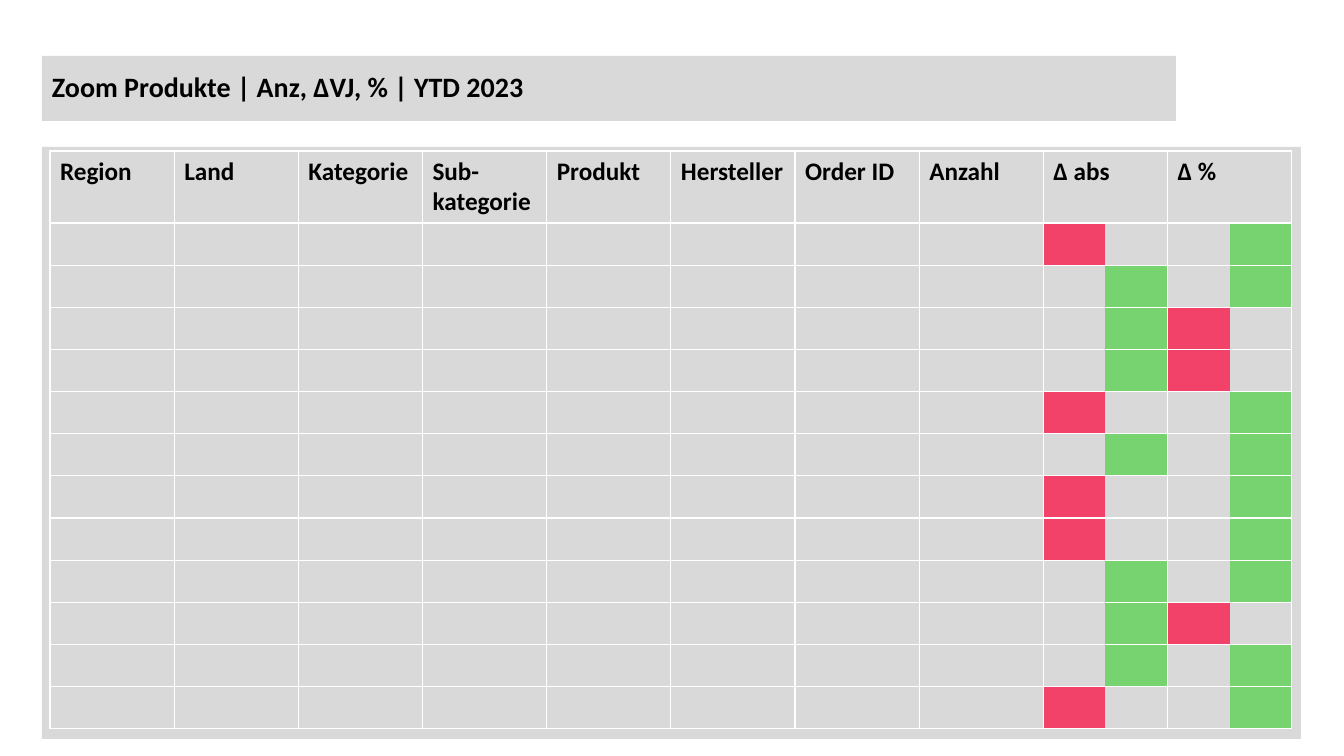
from lxml import etree
from pptx import Presentation
from pptx import util as u
from pptx.dml.color import RGBColor
from pptx.enum import shapes, text
from pptx.oxml.ns import qn

EMU_PER_PX = 914400 / 100.8
GREY, WHITE, BLACK = "D9D9D9", "FFFFFF", "000000"
RED, GREEN = "F24269", "77D36F"
HEADERS = ["Region", "Land", "Kategorie", "Sub-kategorie", "Produkt",
           "Hersteller", "Order ID", "Anzahl", "Δ abs", "Δ %"]
DELTA_SIGNS = ["-+", "++", "+-", "+-", "-+", "++",
               "-+", "-+", "++", "+-", "++", "-+"]
DELTA_STOPS = {"-": (RED, GREY), "+": (GREY, GREEN)}


def px(value):
    return u.Emu(round(value * EMU_PER_PX))


def color(value):
    return RGBColor.from_string(value)


def write(frame, words, size):
    paragraph = frame.paragraphs[0]
    paragraph.text = words
    font = paragraph.runs[0].font
    for name, value in {"name": "Calibri", "size": u.Pt(size), "bold": True}.items():
        setattr(font, name, value)
    font.color.rgb = color(BLACK)
    return paragraph


def add_panel(slide, left, top, width, height):
    panel = slide.shapes.add_shape(shapes.MSO_SHAPE.RECTANGLE,
                                   px(left), px(top), px(width), px(height))
    panel.shadow.inherit = False
    panel.fill.solid()
    panel.fill.fore_color.rgb = color(GREY)
    panel.line.fill.background()
    return panel


def add_title(slide, words):
    frame = add_panel(slide, 42, 56, 1134, 65).text_frame
    frame.word_wrap = True
    frame.vertical_anchor = text.MSO_ANCHOR.MIDDLE
    paragraph = write(frame, words, 20)
    paragraph.alignment = text.PP_ALIGN.LEFT
    paragraph.line_spacing = 0.9


def set_borders(cell):
    properties = cell._tc.get_or_add_tcPr()
    for side in ("a:lnL", "a:lnR", "a:lnT", "a:lnB"):
        line = etree.SubElement(properties, qn(side), w=str(u.Pt(1)))
        fill = etree.SubElement(line, qn("a:solidFill"))
        etree.SubElement(fill, qn("a:srgbClr"), val=WHITE)


def fill_halves(cell, colors):
    cell.fill.gradient()
    cell.fill.gradient_angle = 0
    for stop, value in zip(cell.fill.gradient_stops, colors):
        stop.position = 0.5
        stop.color.rgb = color(value)


def add_product_table(slide, left, top, width, header_height, body_height):
    row_count, column_count = len(DELTA_SIGNS) + 1, len(HEADERS)
    table = slide.shapes.add_table(row_count, column_count, px(left), px(top), px(width),
                                   px(header_height + body_height)).table
    table.first_row = table.horz_banding = False
    for column in table.columns:
        column.width = px(width / column_count)
    for row in table.rows:
        row.height = px(body_height / len(DELTA_SIGNS))
    table.rows[0].height = px(header_height)
    for cell in table.iter_cells():
        set_borders(cell)
        cell.fill.background()
    for column, words in enumerate(HEADERS):
        write(table.cell(0, column).text_frame, words, 18)
    for row, signs in enumerate(DELTA_SIGNS, 1):
        for column, sign in enumerate(signs, column_count - len(signs)):
            fill_halves(table.cell(row, column), DELTA_STOPS[sign])


def main():
    presentation = Presentation()
    presentation.slide_width, presentation.slide_height = px(1344), px(756)
    slide = presentation.slides.add_slide(presentation.slide_layouts[6])
    add_panel(slide, 42, 147, 1259, 592)
    add_title(slide, "Zoom Produkte | Anz, ΔVJ, % | YTD 2023")
    add_product_table(slide, 50, 151, 1242, 72, 506)
    presentation.save("out.pptx")


if __name__ == "__main__":
    main()
